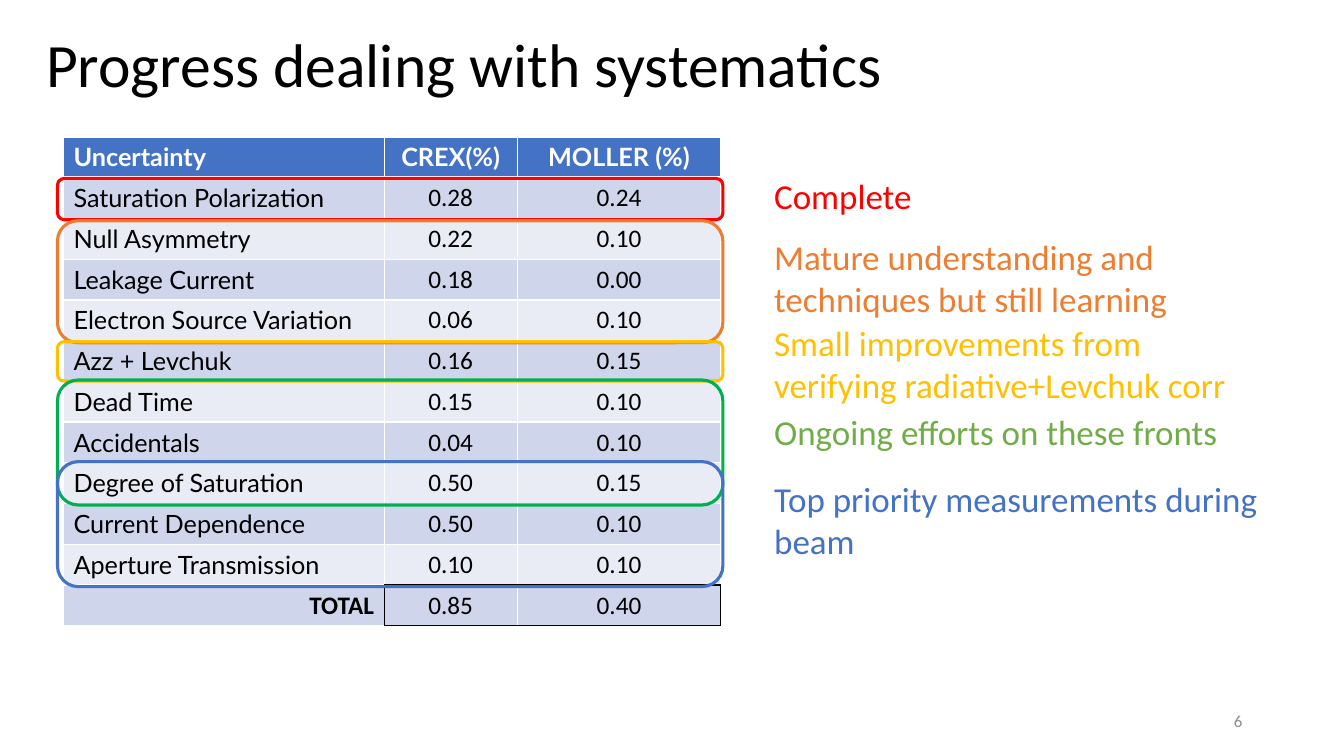
from lxml import etree
from pptx import Presentation
from pptx.dml.color import RGBColor
from pptx.enum.shapes import MSO_SHAPE
from pptx.enum.text import MSO_ANCHOR, PP_ALIGN
from pptx.oxml.ns import qn
from pptx.util import Inches, Pt

LEFT, CENTER, RIGHT = PP_ALIGN.LEFT, PP_ALIGN.CENTER, PP_ALIGN.RIGHT
TOP, MIDDLE = MSO_ANCHOR.TOP, MSO_ANCHOR.MIDDLE
ROUNDED = MSO_SHAPE.ROUNDED_RECTANGLE

TITLE = "Progress dealing with systematics"
PAGE = "6"
ROWS = [
    ("Uncertainty", "CREX(%)", "MOLLER (%)"),
    ("Saturation Polarization", "0.28", "0.24"),
    ("Null Asymmetry", "0.22", "0.10"),
    ("Leakage Current", "0.18", "0.00"),
    ("Electron Source Variation", "0.06", "0.10"),
    ("Azz + Levchuk", "0.16", "0.15"),
    ("Dead Time", "0.15", "0.10"),
    ("Accidentals", "0.04", "0.10"),
    ("Degree of Saturation", "0.50", "0.15"),
    ("Current Dependence", "0.50", "0.10"),
    ("Aperture Transmission", "0.10", "0.10"),
    ("TOTAL", "0.85", "0.40"),
]
COL_WIDTHS = [3.18, 1.32, 2.02]
TABLE_LEFT, TABLE_TOP, TABLE_HEIGHT = 0.63, 1.36, 4.85
HEADER_FILL, BAND_FILLS = "4472C4", ("E9EBF5", "CFD5EA")

NOTES = [
    ("Complete", 1.68, 1.58, 0.52, "FF0000", False),
    ("Mature understanding and techniques but still learning",
     2.29, 4.99, 0.94, "ED7D31", True),
    ("Small improvements from verifying radiative+Levchuk corr",
     3.14, 5, 0.94, "FFC000", True),
    ("Ongoing efforts on these fronts", 4.02, 4.65, 0.52, "70AD47", False),
    ("Top priority measurements during beam", 4.69, 5.45, 0.94, "4472C4", True),
]
NOTE_LEFT = 7.58
GROUPS = [
    (1.77, 0.41, "FF0000"),
    (2.19, 1.21, "ED7D31"),
    (3.39, 0.39, "FFC000"),
    (3.77, 1.24, "00B050"),
    (4.58, 1.24, "4472C4"),
]
GROUP_LEFT, GROUP_WIDTH = 0.57, 6.6


def rgb(color):
    return RGBColor.from_string(color)


def write(tf, text, size=18, color="000000", font="Calibri", bold=False,
          align=LEFT, anchor=TOP, wrap=True, spacing=None):
    tf.word_wrap = wrap
    tf.vertical_anchor = anchor
    p = tf.paragraphs[0]
    p.alignment = align
    if spacing:
        p.line_spacing = spacing
    r = p.add_run()
    r.text = text
    r.font.size = Pt(size)
    r.font.name = font
    r.font.bold = bold
    r.font.color.rgb = rgb(color)


def add_text(s, text, left, top, width, height, **fmt):
    sp = s.shapes.add_textbox(Inches(left), Inches(top), Inches(width), Inches(height))
    write(sp.text_frame, text, **fmt)


def set_borders(cell, edges):
    tcPr = cell._tc.get_or_add_tcPr()
    for i, (side, (color, width)) in enumerate(edges.items()):
        ln = etree.Element(qn("a:ln" + side), w=str(Pt(width)))
        fill = etree.SubElement(ln, qn("a:solidFill"))
        etree.SubElement(fill, qn("a:srgbClr"), val=color)
        tcPr.insert(i, ln)


def cell_edges(row, col):
    last = len(ROWS) - 1
    white, black, thick = ("FFFFFF", 1), ("000000", 1), ("FFFFFF", 3)
    edges = dict.fromkeys("LRTB", white)
    if row == 0:
        edges["B"] = thick
    if row == 1:
        edges["T"] = thick
    if row == last - 1 and col > 0:
        edges["B"] = black
    if row == last:
        if col > 0:
            edges["T"] = edges["B"] = black
        if col == 1:
            edges["L"] = black
        else:
            edges["R"] = black
    return edges


def add_uncertainties(s):
    table = s.shapes.add_table(
        len(ROWS), len(COL_WIDTHS), Inches(TABLE_LEFT), Inches(TABLE_TOP),
        Inches(sum(COL_WIDTHS)), Inches(TABLE_HEIGHT)).table
    for column, width in zip(table.columns, COL_WIDTHS):
        column.width = Inches(width)
    for i, row in enumerate(ROWS):
        header, total = i == 0, i == len(ROWS) - 1
        for j, text in enumerate(row):
            cell = table.cell(i, j)
            cell.fill.solid()
            cell.fill.fore_color.rgb = rgb(HEADER_FILL if header else BAND_FILLS[i % 2])
            label = j == 0
            write(cell.text_frame, text,
                  color="FFFFFF" if header else "000000",
                  font="Lato" if header or (label and not total) else "Calibri",
                  bold=header or (label and total),
                  align=CENTER if not label else RIGHT if total else LEFT)
            set_borders(cell, cell_edges(i, j))


def add_group(s, top, height, color):
    sp = s.shapes.add_shape(ROUNDED, Inches(GROUP_LEFT), Inches(top),
                            Inches(GROUP_WIDTH), Inches(height))
    sp.shadow.inherit = False
    sp.fill.background()
    sp.line.color.rgb = rgb(color)
    sp.line.width = Pt(2.25)


def main():
    prs = Presentation()
    prs.slide_width, prs.slide_height = Inches(13.33), Inches(7.5)
    s = prs.slides.add_slide(prs.slide_layouts[6])
    add_text(s, TITLE, 0.36, 0.14, 12.15, 1.07, size=44, anchor=MIDDLE, spacing=0.9)
    add_text(s, PAGE, 9.42, 6.95, 3, 0.4, size=12, color="8C8C8C",
             align=RIGHT, anchor=MIDDLE)
    for text, top, width, height, color, wrap in NOTES:
        add_text(s, text, NOTE_LEFT, top, width, height, size=25, color=color, wrap=wrap)
    add_uncertainties(s)
    for group in GROUPS:
        add_group(s, *group)
    prs.save("out.pptx")


if __name__ == "__main__":
    main()
